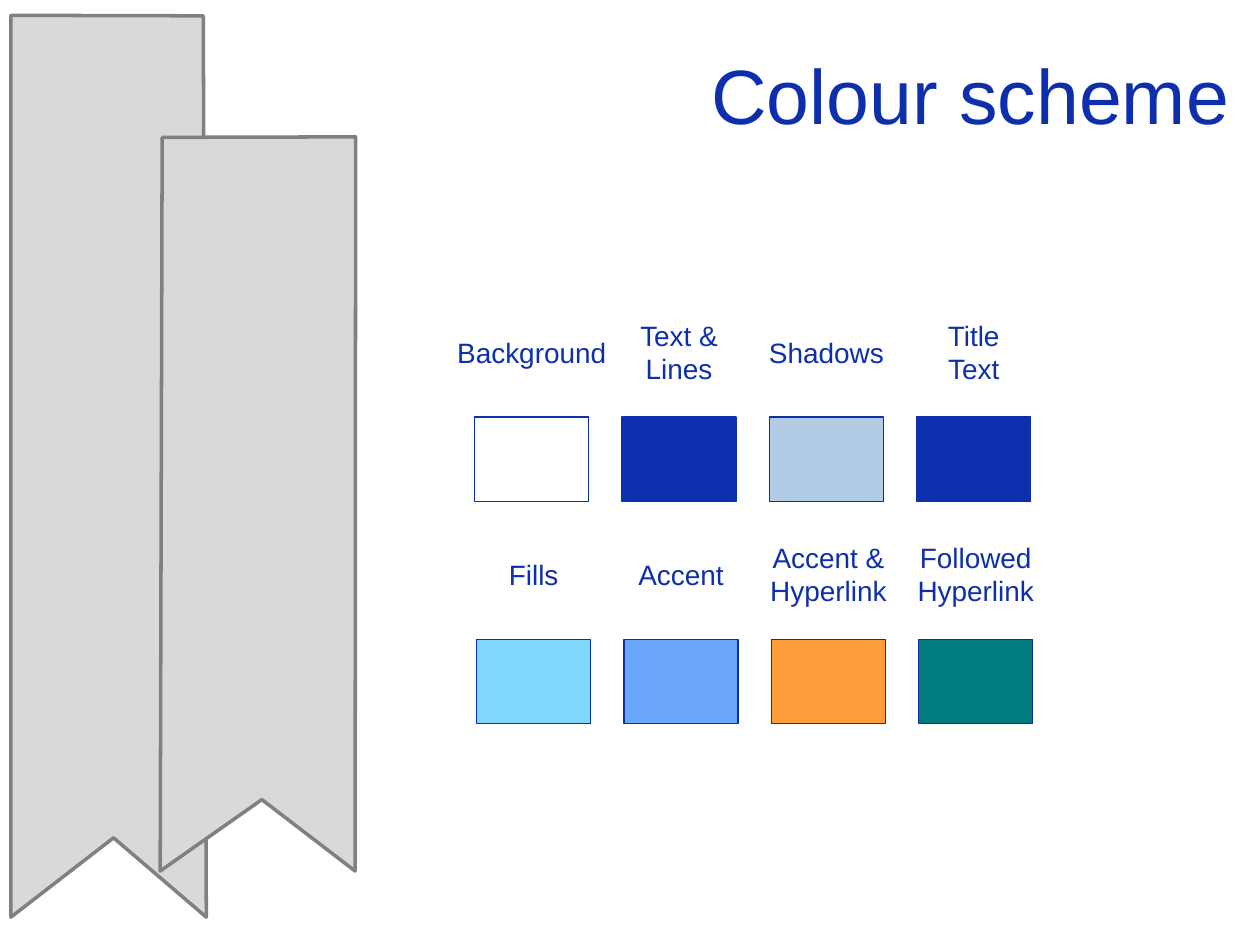
from pptx import Presentation
from pptx.dml.color import RGBColor
from pptx.enum import shapes, text
from pptx.util import Cm, Pt

NAVY = "0E2FAD"


def colour(hex_code):
    return RGBColor.from_string(hex_code)


def add_text(paragraph, words, size, align):
    paragraph.alignment = align
    for i, line in enumerate(words.split("\v")):
        if i:
            paragraph.add_line_break()
        run = paragraph.add_run()
        run.text = line
        run.font.name = "Arial"
        run.font.size = Pt(size)
        run.font.color.rgb = colour(NAVY)


prs = Presentation()
prs.slide_width, prs.slide_height = Cm(25.4), Cm(19.05)
slide = prs.slides.add_slide(prs.slide_layouts[5])

# Ribbons, the shorter one in front
ribbons = [
    [(0.22, 0.31), (4.1, 0.32), (4.16, 18.49), (2.29, 16.89), (0.22, 18.49)],
    [(3.27, 2.77), (7.17, 2.76), (7.16, 17.56), (5.28, 16.12), (3.23, 17.56)],
]
for corners in ribbons:
    points = [(Cm(x), Cm(y)) for x, y in corners]
    outline = slide.shapes.build_freeform(*points[0])
    outline.add_line_segments(points[1:], close=True)
    ribbon = outline.convert_to_shape()
    ribbon.shadow.inherit = False
    ribbon.fill.solid()
    ribbon.fill.fore_color.rgb = colour("D9D9D9")
    ribbon.line.color.rgb = colour("808080")
    ribbon.line.width = Pt(2)

# Title
title = slide.shapes.title
title.left, title.top, title.width, title.height = Cm(2.18), Cm(0.3), Cm(22.86), Cm(3.18)
title.text_frame.vertical_anchor = text.MSO_ANCHOR.MIDDLE
add_text(title.text_frame.paragraphs[0], "Colour scheme", 44, text.PP_ALIGN.RIGHT)

# Rows: left of first swatch, top of swatches, middle of labels,
# then label, label width and swatch colour
rows = [
    (9.57, 8.41, 7.1, [
        ("Background", 3.53, "FFFFFF"),
        ("Text &\nLines", 2.13, NAVY),
        ("Shadows", 2.82, "B3CCE6"),
        ("Title\vText", 1.6, NAVY),
    ]),
    (9.61, 12.89, 11.58, [
        ("Fills", 1.5, "7FD7FC"),
        ("Accent", 2.24, "6BA7F8"),
        ("Accent &\nHyperlink", 2.94, "FF9D3B"),
        ("Followed\nHyperlink", 2.94, "007B7E"),
    ]),
]
swatch_width, swatch_height, pitch = 2.3, 1.7, 2.97

for row_left, swatch_top, label_middle, entries in rows:
    for column, (words, label_width, fill) in enumerate(entries):
        left = row_left + column * pitch

        # Colour swatch
        swatch = slide.shapes.add_shape(
            shapes.MSO_SHAPE.RECTANGLE,
            Cm(left), Cm(swatch_top), Cm(swatch_width), Cm(swatch_height))
        swatch.shadow.inherit = False
        swatch.fill.solid()
        swatch.fill.fore_color.rgb = colour(fill)
        swatch.line.color.rgb = colour(NAVY)
        swatch.line.width = Pt(0.75)

        # Label centred above it
        label_height = 0.94 if len(words.splitlines()) == 1 else 1.62
        label = slide.shapes.add_textbox(
            Cm(left + (swatch_width - label_width) / 2),
            Cm(label_middle - label_height / 2),
            Cm(label_width), Cm(label_height))
        frame = label.text_frame
        frame.word_wrap = False
        frame.auto_size = text.MSO_AUTO_SIZE.SHAPE_TO_FIT_TEXT
        for i, part in enumerate(words.split("\n")):
            paragraph = frame.add_paragraph() if i else frame.paragraphs[0]
            add_text(paragraph, part, 16, text.PP_ALIGN.CENTER)

prs.save("out.pptx")
